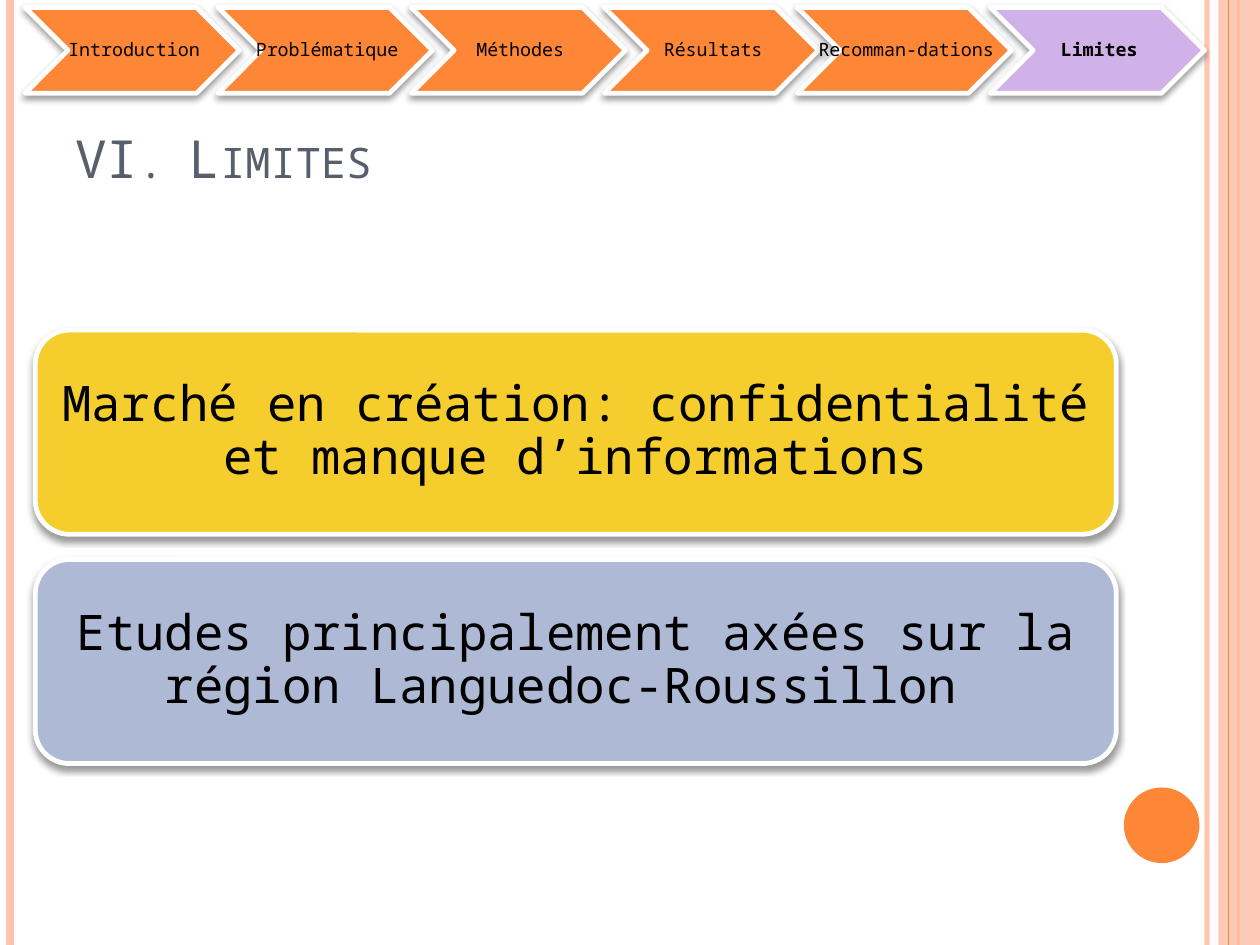
from lxml import etree
from pptx import Presentation
from pptx.dml.color import RGBColor
from pptx.enum.shapes import MSO_CONNECTOR, MSO_SHAPE
from pptx.enum.text import MSO_ANCHOR, PP_ALIGN
from pptx.oxml.ns import qn
from pptx.util import Inches, Pt

STRAIGHT = MSO_CONNECTOR.STRAIGHT
CHEVRON, ROUNDED = MSO_SHAPE.CHEVRON, MSO_SHAPE.ROUNDED_RECTANGLE
RECTANGLE, OVAL = MSO_SHAPE.RECTANGLE, MSO_SHAPE.OVAL
MIDDLE, BOTTOM = MSO_ANCHOR.MIDDLE, MSO_ANCHOR.BOTTOM
CENTER, LEFT = PP_ALIGN.CENTER, PP_ALIGN.LEFT

WIDTH, HEIGHT = 10, 7.5
FONT = "Noto Sans Mono"
ORANGE, PEACH, LILAC = "FE8637", "FEC3AE", "D1B2E8"
BLACK, WHITE, SLATE = "000000", "FFFFFF", "575F6D"

STEPS = ["Introduction", "Problématique", "Méthodes", "Résultats", "Recomman-dations", "Limites"]
CURRENT_STEP = "Limites"
STEP_LEFT, STEP_TOP, STEP_PITCH = 0.2, 0.06, 1.532
STEP_SIZE = (1.7, 0.68)

LIMITS = [
    ("Marché en création: confidentialité et manque d’informations", "F5CD2D"),
    ("Etudes principalement axées sur la région Languedoc-Roussillon ", "AEBAD5"),
]
LIMIT_LEFT, LIMIT_TOP, LIMIT_PITCH = 0.28, 2.62, 1.82
LIMIT_SIZE = (8.58, 1.62)

RULES = [
    (9.58, PEACH, 3, 93),
    (0.08, PEACH, 4.5, 100),
    (9.83, ORANGE, 1.5, 100),
]


def paint(color_format, color):
    color_format.rgb = RGBColor.from_string(color)


def set_opacity(fill_parent, percent):
    color = fill_parent.find(qn("a:solidFill"))[0]
    etree.SubElement(color, qn("a:alpha"), val=str(percent * 1000))


def add_rule(slide, left, color, weight, opacity=100):
    rule = slide.shapes.add_connector(STRAIGHT, Inches(left), 0, Inches(left), Inches(HEIGHT))
    rule.line.width = Pt(weight)
    paint(rule.line.color, color)
    properties = rule._element.spPr
    if opacity < 100:
        set_opacity(properties.find(qn("a:ln")), opacity)
    etree.SubElement(properties, qn("a:effectLst"))


def add_solid(slide, kind, left, top, width, height, color):
    shape = slide.shapes.add_shape(kind, Inches(left), Inches(top), Inches(width), Inches(height))
    shape.shadow.inherit = False
    shape.fill.solid()
    paint(shape.fill.fore_color, color)
    shape.line.fill.background()
    return shape


def add_raised(slide, kind, left, top, size, color):
    shape = add_solid(slide, kind, left, top, *size, color)
    shape.line.width = Pt(2.75)
    shape.line.fill.solid()
    paint(shape.line.color, WHITE)
    properties = shape._element.spPr
    etree.SubElement(properties.find(qn("a:ln")), qn("a:round"))
    shadow = etree.SubElement(
        properties.find(qn("a:effectLst")), qn("a:outerShdw"),
        blurRad=str(Pt(4)), dist=str(Pt(2)), dir="5400000", rotWithShape="0")
    shade = etree.SubElement(shadow, qn("a:srgbClr"), val=BLACK)
    etree.SubElement(shade, qn("a:alpha"), val="40000")
    return shape


def write(shape, text, size, color, anchor, align, margins, wrap=True, bold=False):
    frame = shape.text_frame
    frame.word_wrap = wrap
    frame.vertical_anchor = anchor
    frame.margin_left, frame.margin_top, frame.margin_right, frame.margin_bottom = map(Inches, margins)
    paragraph = frame.paragraphs[0]
    paragraph.alignment = align
    run = paragraph.add_run()
    run.text = text
    run.font.name = FONT
    run.font.size = Pt(size)
    run.font.bold = bold
    paint(run.font.color, color)
    return paragraph, run


def add_frame(slide):
    for rule in RULES:
        add_rule(slide, *rule)
    band = add_solid(slide, RECTANGLE, 9.67, 0, 0.33, HEIGHT, PEACH)
    set_opacity(band._element.spPr, 87)
    add_rule(slide, 9.75, ORANGE, 0.75)
    add_solid(slide, OVAL, 8.92, 6.25, 0.6, 0.6, ORANGE)


def add_title(slide, text):
    box = slide.shapes.add_textbox(Inches(0.5), Inches(0.3), Inches(8.17), Inches(1.25))
    _, run = write(box, text, 30, SLATE, BOTTOM, LEFT, (0.1, 0.05, 0.1, 0.05))
    run._r.get_or_add_rPr().set("cap", "small")


def add_steps(slide):
    for column, name in enumerate(STEPS):
        current = name == CURRENT_STEP
        left = STEP_LEFT + column * STEP_PITCH
        step = add_raised(slide, CHEVRON, left, STEP_TOP, STEP_SIZE, LILAC if current else ORANGE)
        paragraph, _ = write(step, name, 10.5, BLACK, MIDDLE, CENTER,
                             (0.05, 0.02, 0.02, 0.02), wrap=False, bold=current)
        paragraph.line_spacing = 0.9


def add_limits(slide):
    for row, (text, color) in enumerate(LIMITS):
        top = LIMIT_TOP + row * LIMIT_PITCH
        card = add_raised(slide, ROUNDED, LIMIT_LEFT, top, LIMIT_SIZE, color)
        paragraph, _ = write(card, text, 28, BLACK, MIDDLE, CENTER, (0.04, 0.04, 0.04, 0.04))
        paragraph.line_spacing = 0.9


def main():
    presentation = Presentation()
    presentation.slide_width = Inches(WIDTH)
    presentation.slide_height = Inches(HEIGHT)
    slide = presentation.slides.add_slide(presentation.slide_layouts[6])
    add_frame(slide)
    add_title(slide, "VI. Limites")
    add_steps(slide)
    add_limits(slide)
    presentation.save("out.pptx")


if __name__ == "__main__":
    main()
